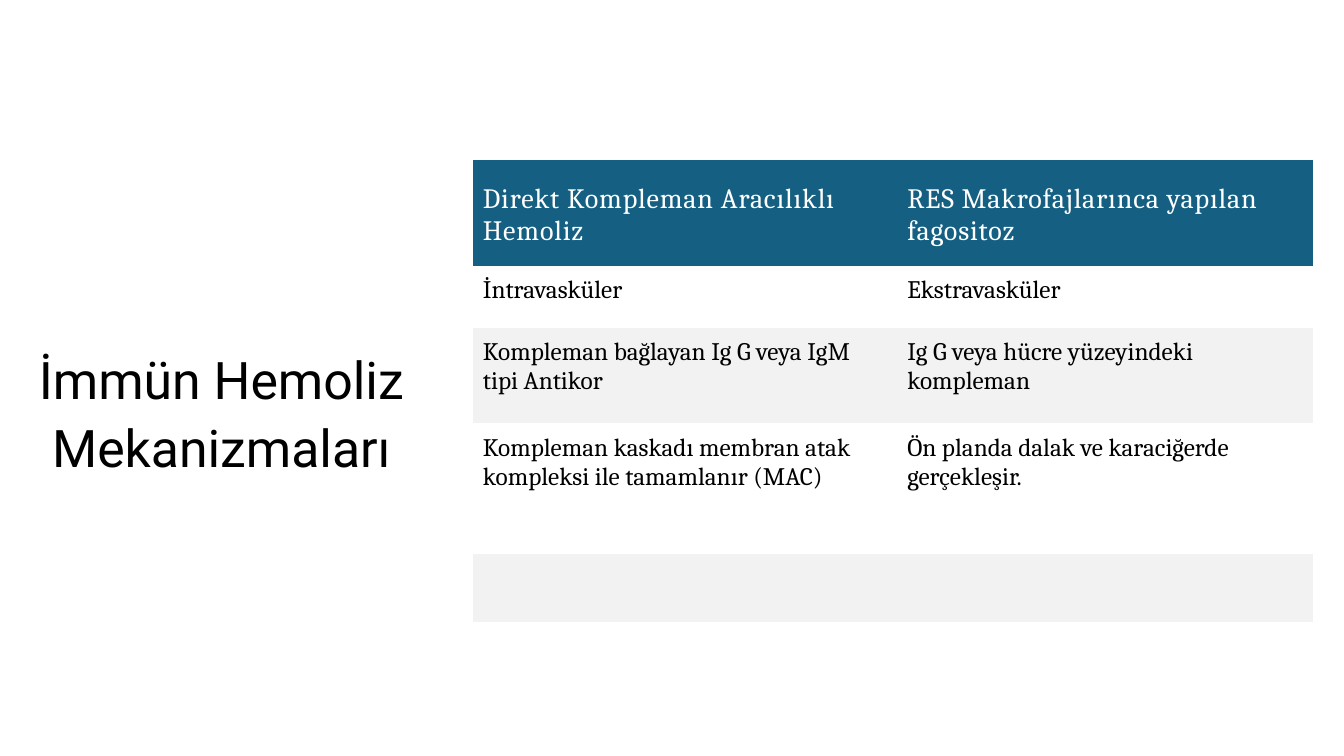
from lxml import etree
from pptx import Presentation
from pptx import util as u
from pptx.dml.color import RGBColor
from pptx.enum import text
from pptx.oxml.ns import qn

BLACK = RGBColor(0x00, 0x00, 0x00)
WHITE = RGBColor(0xFF, 0xFF, 0xFF)
TEAL = RGBColor(0x15, 0x60, 0x82)
BAND = RGBColor(0xF2, 0xF2, 0xF2)
PLAIN_TABLE = "{2D5ABB26-0587-4C30-8999-92F81FD0307C}"

MECHANISMS = [
    ("Direkt Kompleman Aracılıklı Hemoliz", "RES Makrofajlarınca yapılan fagositoz"),
    ("İntravasküler", "Ekstravasküler"),
    ("Kompleman bağlayan Ig G veya IgM tipi Antikor",
     "Ig G veya hücre yüzeyindeki kompleman"),
    ("Kompleman kaskadı membran atak kompleksi ile tamamlanır (MAC)",
     "Ön planda dalak ve karaciğerde gerçekleşir."),
    ("", ""),
]


class SlideBuilder:
    """Holds the style and the current slide; lengths are percent of the slide."""
    title_font, body_font = "Roboto", "Cambria"
    title_size, header_size, body_size = 37, 20, 18

    def __init__(self, deck):
        self.deck = deck
        self.page = deck.slides.add_slide(deck.slide_layouts[5])

    def across(self, share):
        return round(self.deck.slide_width * share / 100)

    def down(self, share):
        return round(self.deck.slide_height * share / 100)

    def set_margins(self, box, sides, top, bottom):
        box.margin_left = box.margin_right = u.Inches(sides)
        box.margin_top, box.margin_bottom = u.Inches(top), u.Inches(bottom)

    def format_span(self, span, name, size, color):
        span.font.name, span.font.size = name, u.Pt(size)
        span.font.color.rgb = color

    def title(self, wording, left, top, width, height):
        box = self.page.shapes.title
        box.left, box.top = self.across(left), self.down(top)
        box.width, box.height = self.across(width), self.down(height)
        frame = box.text_frame
        frame.text = wording
        frame.word_wrap = True
        frame.auto_size = text.MSO_AUTO_SIZE.NONE
        frame.vertical_anchor = text.MSO_ANCHOR.BOTTOM
        self.set_margins(frame, 0.12, 0.12, 0.1)
        para = frame.paragraphs[0]
        para.alignment, para.line_spacing = text.PP_ALIGN.CENTER, 1.1
        self.format_span(para.runs[0], self.title_font, self.title_size, BLACK)

    def table(self, rows, left, top, widths, heights):
        table = self.page.shapes.add_table(
            len(rows), len(widths), self.across(left), self.down(top),
            self.across(sum(widths)), self.down(sum(heights))).table
        properties = table._tbl.tblPr
        style = properties.find(qn("a:tableStyleId"))
        if style is None:
            style = etree.SubElement(properties, qn("a:tableStyleId"))
        style.text = PLAIN_TABLE
        table.horz_banding = False
        for column, width in zip(table.columns, widths):
            column.width = self.across(width)
        for index, (row, height) in enumerate(zip(table.rows, heights)):
            row.height = self.down(height)
            for cell, wording in zip(row.cells, rows[index]):
                self.cell(cell, wording, index)

    def cell(self, cell, wording, row_index):
        header = row_index == 0
        self.set_margins(cell, 0.1, 0.1, 0.05)
        # Header colour first, then every second row banded
        if header or row_index % 2 == 0:
            cell.fill.solid()
            cell.fill.fore_color.rgb = TEAL if header else BAND
        else:
            cell.fill.background()
        if header:
            cell.vertical_anchor = text.MSO_ANCHOR.MIDDLE
        if not wording:
            return
        cell.text_frame.text = wording
        span = cell.text_frame.paragraphs[0].runs[0]
        self.format_span(span, self.body_font,
                         self.header_size if header else self.body_size,
                         WHITE if header else BLACK)
        if header:
            span.font._element.set("spc", "60")  # letter spacing 0.6 pt


def main():
    deck = Presentation()
    deck.slide_width, deck.slide_height = u.Inches(13.33), u.Inches(7.5)
    builder = SlideBuilder(deck)
    # Title on the left
    builder.title("İmmün Hemoliz Mekanizmaları", 0.83, 43.07, 31.28, 21.47)
    # Comparison table on the right
    builder.table(MECHANISMS, 35.18, 21.2, widths=(31.58, 30.91),
                  heights=(14, 8.13, 12.67, 17.33, 8.93))
    deck.save("out.pptx")


if __name__ == "__main__":
    main()
